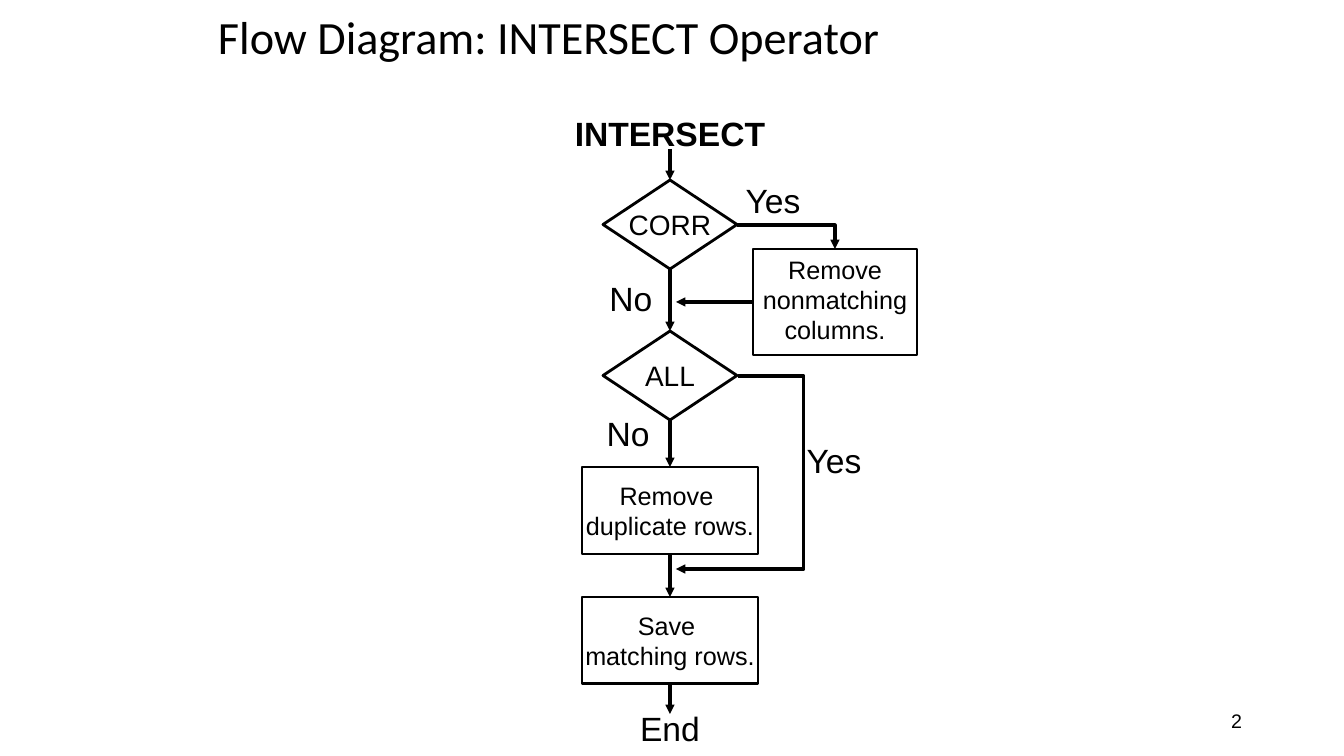
from lxml import etree
from pptx import Presentation
from pptx import util as u
from pptx.dml.color import RGBColor
from pptx.enum import shapes, text
from pptx.oxml.ns import qn

HUES = {"ink": "000000", "paper": "FFFFFF"}
PX = 914400 / 100.8
MID = 670  # centre of the main column

TITLE = "Flow Diagram: INTERSECT Operator"
DIAMOND, RECT = shapes.MSO_SHAPE.FLOWCHART_DECISION, shapes.MSO_SHAPE.RECTANGLE
# name: shape, centre x, top, width, height, text, size
NODES = {
    "corr": (DIAMOND, MID, 180, 134, 89, "CORR", 20),
    "all": (DIAMOND, MID, 331, 134, 89, "ALL", 20),
    "rows": (RECT, MID, 467, 176, 87, "Remove \vduplicate rows.", 18),
    "save": (RECT, MID, 597, 176, 87, "Save \vmatching rows.", 18),
    "cols": (RECT, 835, 249, 164, 106, "Remove nonmatching\vcolumns.", 18),
}
# text, centre x, top, width, height, format
LABELS = [
    ("INTERSECT", MID, 113, 192, 40, {"bold": True}),
    ("Yes", 773, 180, 55, 40, {}),
    ("No", 631, 278, 43, 40, {}),
    ("No", 628, 413, 43, 40, {}),
    ("Yes", 834, 440, 55, 40, {}),
    ("End", MID, 714, 60, 34, {"gap": 0.85}),
]
# ends are (node, side) or a point
TOP, LEFT, BOTTOM = 0, 1, 2
ARROWS = [
    ((MID, 149), ("corr", TOP)),
    (("corr", BOTTOM), ("all", TOP)),
    (("all", BOTTOM), ("rows", TOP)),
    (("rows", BOTTOM), ("save", TOP)),
    (("save", BOTTOM), (MID, 714)),
    (("cols", LEFT), (676, 302)),
]
# start, end, preset, bend as a share of the width
BENDS = [
    ((737, 225), (835, 249), "bentConnector2", None),
    ((738, 376), (676, 569), "bentConnector3", (738 - 804) / (738 - 676)),
]


def px(*vals):
    return [round(v * PX) for v in vals]


def hue(name):
    return RGBColor.from_string(HUES[name])


def write(frame, words, size=24, font="Arial", bold=False, gap=None,
          align="CENTER", anchor="TOP", wrap=False, inset=(0, 0)):
    frame.text = words
    frame.word_wrap = wrap
    frame.auto_size = text.MSO_AUTO_SIZE.NONE
    frame.vertical_anchor = getattr(text.MSO_ANCHOR, anchor)
    frame.margin_left = frame.margin_right = px(inset[0])[0]
    frame.margin_top = frame.margin_bottom = px(inset[1])[0]
    para = frame.paragraphs[0]
    para.alignment = getattr(text.PP_ALIGN, align)
    if gap:
        para.line_spacing = gap
    for run in para.runs:
        run.font.size, run.font.name, run.font.bold = u.Pt(size), font, bold
        run.font.color.rgb = hue("ink")


def link(kind, start, end):
    """Draw a connector with an arrowhead at its end."""
    line = slide.shapes.add_connector(kind, *px(*start, *end))
    line.line.color.rgb = hue("ink")
    line.line.width = u.Pt(2.25)
    etree.SubElement(line.line._get_or_add_ln(), qn("a:tailEnd"), type="triangle")
    etree.SubElement(line._element.spPr, qn("a:effectLst"))
    return line


def spot(end):
    """Give the point of an end: the middle of a node's side, or itself."""
    if end[0] not in NODES:
        return end
    _, mid, top, wide, high, *_ = NODES[end[0]]
    return {TOP: (mid, top), LEFT: (mid - wide / 2, top + high / 2),
            BOTTOM: (mid, top + high)}[end[1]]


deck = Presentation()
deck.slide_width, deck.slide_height = px(1344, 756)
slide = deck.slides.add_slide(deck.slide_layouts[5])

title = slide.shapes.title
title.left, title.top, title.width, title.height = px(208, 2, 890, 76)
write(title.text_frame, TITLE, size=33, font="Calibri", gap=0.9,
      align="LEFT", anchor="MIDDLE", wrap=True, inset=(10, 5))

page = slide.shapes.add_textbox(*px(950, 701, 302, 40))
write(page.text_frame, "2", size=14, align="RIGHT", anchor="MIDDLE",
      wrap=True, inset=(10, 5))

nodes = {}
for name, (kind, mid, top, wide, high, words, size) in NODES.items():
    node = slide.shapes.add_shape(kind, *px(mid - wide / 2, top, wide, high))
    node.shadow.inherit = False
    node.fill.solid()
    node.fill.fore_color.rgb = hue("paper")
    node.line.color.rgb = hue("ink")
    node.line.width = u.Pt(2)
    side = name == "cols"
    write(node.text_frame, words, size=size, wrap=side,
          anchor="TOP" if side else "MIDDLE", inset=(0, 5 if side else 0))
    nodes[name] = node

for words, mid, top, wide, high, form in LABELS:
    label = slide.shapes.add_textbox(*px(mid - wide / 2, top, wide, high))
    write(label.text_frame, words, **form)

for start, end in ARROWS:
    line = link(shapes.MSO_CONNECTOR.STRAIGHT, spot(start), spot(end))
    if start[0] in nodes:
        line.begin_connect(nodes[start[0]], start[1])
    if end[0] in nodes:
        line.end_connect(nodes[end[0]], end[1])

for start, end, preset, bend in BENDS:
    line = link(shapes.MSO_CONNECTOR.ELBOW, start, end)
    geom = line._element.spPr.find(qn("a:prstGeom"))
    geom.set("prst", preset)
    if bend is not None:
        etree.SubElement(geom.find(qn("a:avLst")), qn("a:gd"), name="adj1",
                         fmla=f"val {round(bend * 100000)}")

deck.save("out.pptx")
